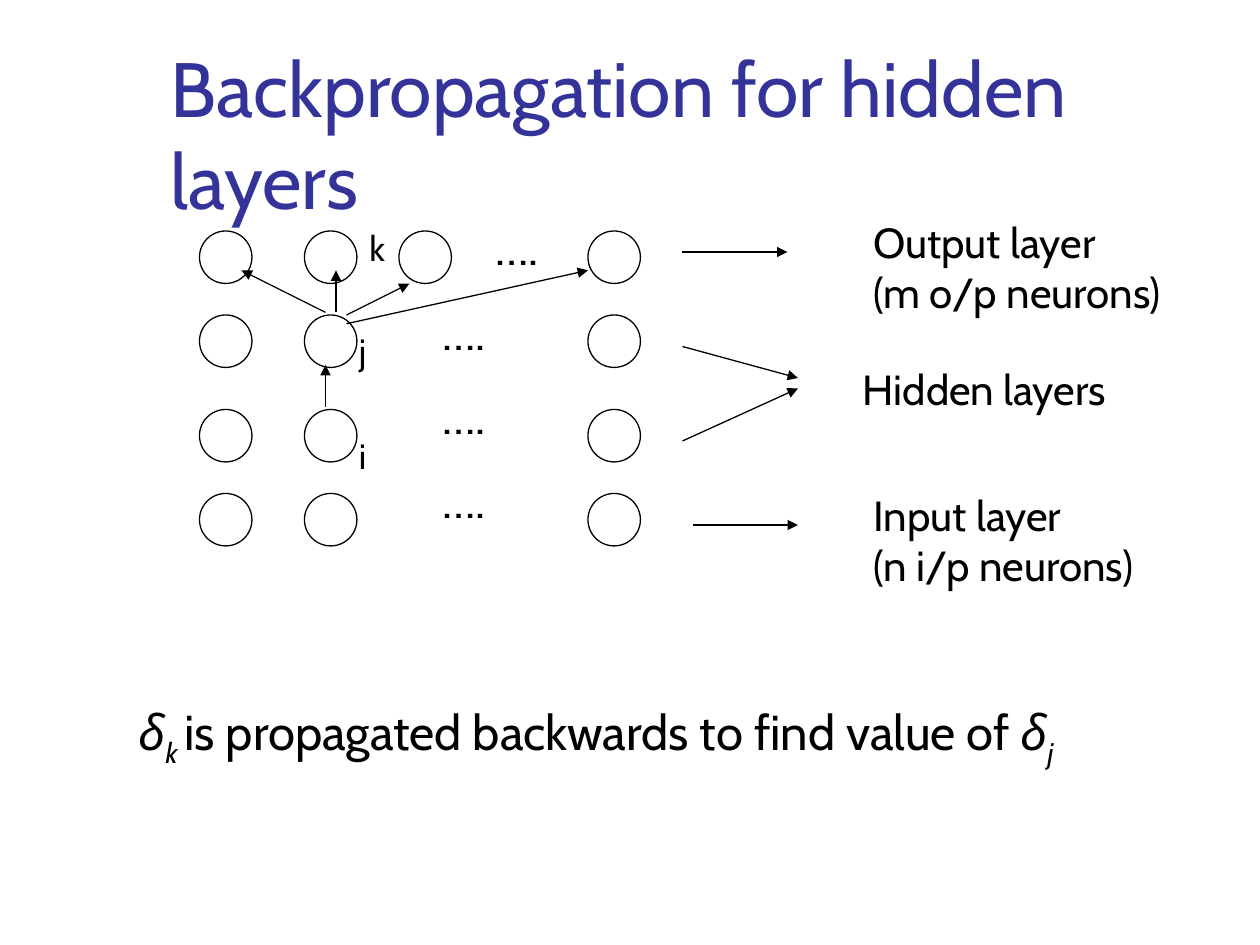
from lxml import etree
from pptx import Presentation
from pptx import util as u
from pptx.dml.color import RGBColor
from pptx.enum import shapes, text
from pptx.oxml.ns import qn

Pt = u.Pt
FONT = "Cabin"
COLORS = {"title": "333399", "ink": "000000"}

# Network: row tops and the column lefts used in each row
DIAMETER = 30
COLUMNS = (114, 174, 336)
LAYERS = {132: (114, 174, 228, 336), 180: COLUMNS, 234: COLUMNS, 282: COLUMNS}

# Arrows as (x1, y1, x2, y2)
ERROR_PATHS = [
    (198, 180, 234, 162), (186, 232.5, 186, 208.5), (186, 178.5, 138, 154.5),
    (198, 185, 336, 154.5), (192, 178.5, 192, 154.5),
]
LABEL_ARROWS = [
    (390, 144, 450, 144), (390, 198, 456, 216),
    (390, 252, 456, 222), (396, 300, 456, 300),
]

# Texts as (left, top, content)
LAYER_NAMES = [
    (492, 120, "Output layer\n(m o/p neurons)"),
    (486, 204, "Hidden layers"),
    (492, 276, "Input layer\n(n i/p neurons)"),
]
NODE_NAMES = [(204, 126, "k"), (198, 185, "j"), (198, 245, "i")]
DOTS = [(276, 120), (246, 169), (246, 217), (246, 265)]

# Runs as (words, italic, subscript)
CONCLUSION = [
    ("δ", True, False), ("k ", True, True),
    ("is propagated backwards to find value of ", False, False),
    ("δ", True, False), ("j", True, True),
]

prs = Presentation()
prs.slide_width, prs.slide_height = Pt(720), Pt(540)
slide = prs.slides.add_slide(prs.slide_layouts[6])


def add_text(content, x, y, w, h, size, color="ink", anchor=text.MSO_ANCHOR.TOP):
    """Add a text box; content is a string or a list of runs."""
    tf = slide.shapes.add_textbox(Pt(x), Pt(y), Pt(w), Pt(h)).text_frame
    tf.word_wrap = True
    tf.vertical_anchor = anchor
    p = tf.paragraphs[0]
    runs = [(content, False, False)] if isinstance(content, str) else content
    for words, italic, subscript in runs:
        for i, line in enumerate(words.split("\n")):
            if i:
                p.add_line_break()
            r = p.add_run()
            r.text = line
            r.font.name, r.font.size, r.font.italic = FONT, Pt(size), italic
            r.font.color.rgb = RGBColor.from_string(COLORS[color])
            if subscript:
                r._r.get_or_add_rPr().set("baseline", "-25000")


def set_line(sp):
    sp.line.color.rgb = RGBColor.from_string(COLORS["ink"])
    sp.line.width = Pt(0.75)


def add_neuron(x, y):
    sp = slide.shapes.add_shape(
        shapes.MSO_SHAPE.OVAL, Pt(x), Pt(y), Pt(DIAMETER), Pt(DIAMETER))
    sp.shadow.inherit = False
    sp.fill.background()
    set_line(sp)


def add_arrow(*ends):
    sp = slide.shapes.add_connector(
        shapes.MSO_CONNECTOR.STRAIGHT, *(Pt(v) for v in ends))
    set_line(sp)
    etree.SubElement(sp.line._get_or_add_ln(), qn("a:tailEnd"), type="triangle")
    etree.SubElement(sp._element.spPr, qn("a:effectLst"))


# Title
add_text("Backpropagation for hidden layers", 90.5, 16.5, 613.5, 115.5, 44,
         color="title", anchor=text.MSO_ANCHOR.BOTTOM)

# Neurons
for top, lefts in LAYERS.items():
    for left in lefts:
        add_neuron(left, top)

# Arrows
for ends in LABEL_ARROWS + ERROR_PATHS:
    add_arrow(*ends)

# Labels
for x, y, name in LAYER_NAMES:
    add_text(name, x, y, 186, 36 + 29 * name.count("\n"), 24)
for x, y, name in NODE_NAMES:
    add_text(name, x, y, 18, 31, 20)
for x, y in DOTS:
    add_text("….", x, y, 54, 41, 28)

# Conclusion
add_text(CONCLUSION, 72, 397.5, 624, 41, 28)

prs.save("out.pptx")
